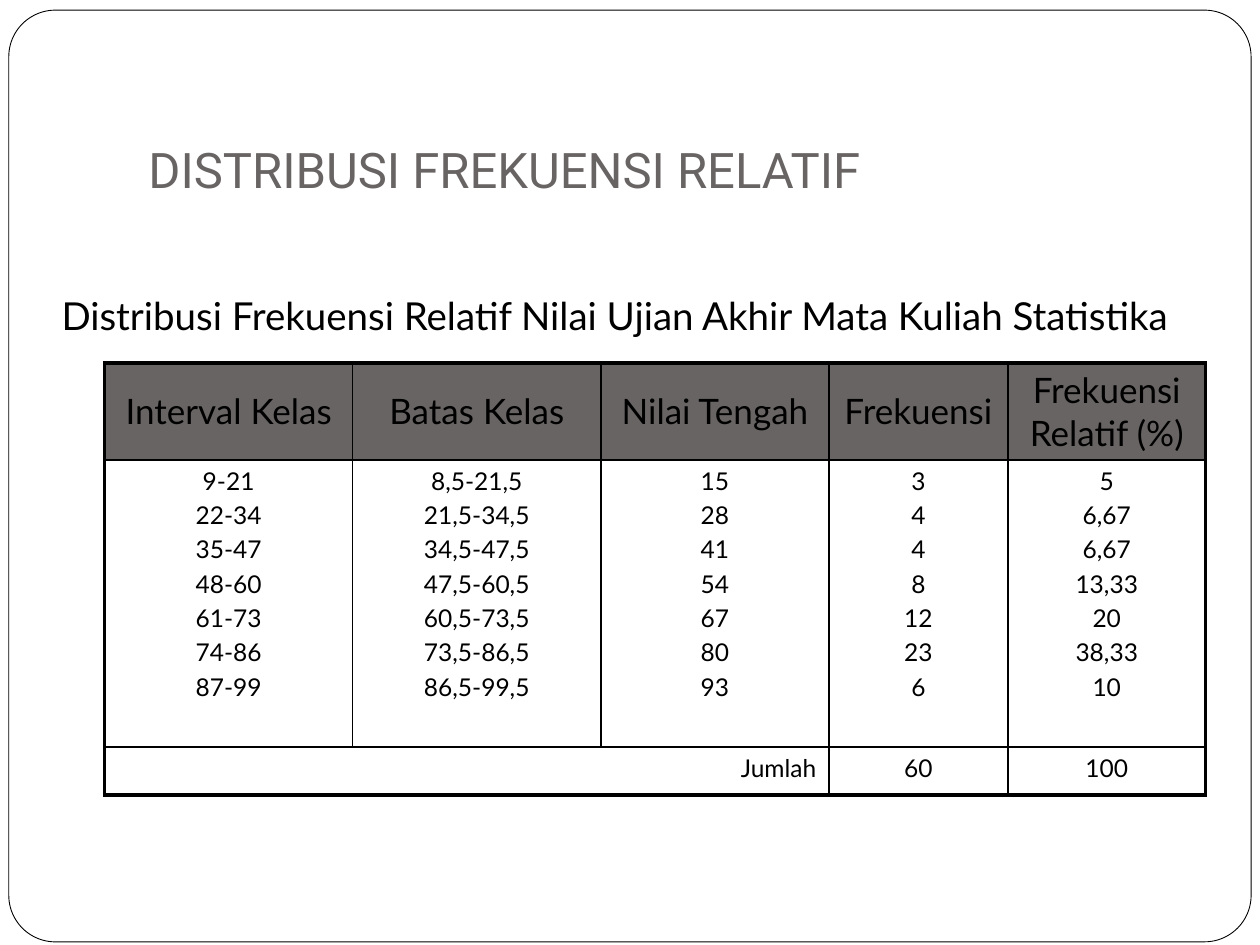
from dataclasses import dataclass

from lxml import etree
from pptx import Presentation
from pptx.dml.color import RGBColor
from pptx.enum.shapes import MSO_SHAPE
from pptx.enum.text import MSO_ANCHOR, PP_ALIGN
from pptx.oxml.ns import qn
from pptx.util import Inches, Pt

ROUNDED = MSO_SHAPE.ROUNDED_RECTANGLE
TOP, MIDDLE, BOTTOM = MSO_ANCHOR.TOP, MSO_ANCHOR.MIDDLE, MSO_ANCHOR.BOTTOM
LEFT, CENTER, RIGHT = PP_ALIGN.LEFT, PP_ALIGN.CENTER, PP_ALIGN.RIGHT


@dataclass(frozen=True)
class Theme:
    ink: str = "000000"
    gray: str = "696464"
    paper: str = "FFFFFF"
    title_font: str = "Roboto"
    body_font: str = "Lato"
    title_size: float = 28
    caption_size: float = 22
    header_size: float = 20
    body_size: float = 14
    outer_line: float = 2.25
    inner_line: float = 1
    frame_line: float = 0.5


@dataclass(frozen=True)
class Box:
    left: int
    top: int
    width: int
    height: int

    def share(self, left, top, width, height):
        return Box(
            self.left + round(self.width * left / 100),
            self.top + round(self.height * top / 100),
            round(self.width * width / 100),
            round(self.height * height / 100),
        )

    def bounds(self):
        return self.left, self.top, self.width, self.height


THEME = Theme()
HEADERS = ["Interval Kelas", "Batas Kelas", "Nilai Tengah", "Frekuensi", "Frekuensi Relatif (%)"]
CLASSES = [
    ("9-21", "8,5-21,5", "15", "3", "5"),
    ("22-34", "21,5-34,5", "28", "4", "6,67"),
    ("35-47", "34,5-47,5", "41", "4", "6,67"),
    ("48-60", "47,5-60,5", "54", "8", "13,33"),
    ("61-73", "60,5-73,5", "67", "12", "20"),
    ("74-86", "73,5-86,5", "80", "23", "38,33"),
    ("87-99", "86,5-99,5", "93", "6", "10"),
]
TOTALS = ["Jumlah", "", "", "60", "100"]
COLUMN_SHARES = [22.54, 22.54, 20.71, 16.25, 17.96]
ROW_SHARES = [22.45, 66.47, 11.08]


def write(frame, lines, *, size, font=THEME.body_font, color=THEME.ink, align=LEFT, gap=0.0):
    for index, line in enumerate(lines):
        paragraph = frame.add_paragraph() if index else frame.paragraphs[0]
        paragraph.alignment = align
        paragraph.space_before = Pt(size * gap)
        run = paragraph.add_run()
        run.text = line
        run.font.name = font
        run.font.size = Pt(size)
        run.font.color.rgb = RGBColor.from_string(color)


def draw_frame(slide, box):
    frame = slide.shapes.add_shape(ROUNDED, *box.bounds())
    frame.adjustments[0] = 0.05
    frame.shadow.inherit = False
    frame.fill.solid()
    frame.fill.fore_color.rgb = RGBColor.from_string(THEME.paper)
    frame.line.color.rgb = RGBColor.from_string(THEME.ink)
    frame.line.width = Pt(THEME.frame_line)


def draw_title(slide, box):
    title = slide.shapes.add_textbox(*box.bounds()).text_frame
    title.word_wrap = True
    title.vertical_anchor = BOTTOM
    title.margin_bottom = Inches(0.1)
    write(title, ["DISTRIBUSI FREKUENSI RELATIF"], size=THEME.title_size,
          font=THEME.title_font, color=THEME.gray)


def draw_caption(slide, box):
    caption = slide.shapes.add_textbox(*box.bounds()).text_frame
    caption.word_wrap = False
    write(caption, ["Distribusi Frekuensi Relatif Nilai Ujian Akhir Mata Kuliah Statistika"],
          size=THEME.caption_size)


def set_borders(cell, outer_sides):
    properties = cell._tc.get_or_add_tcPr()
    for position, side in enumerate("LRTB"):
        width = THEME.outer_line if side in outer_sides else THEME.inner_line
        border = etree.Element(qn(f"a:ln{side}"), w=str(Pt(width)))
        fill = etree.SubElement(border, qn("a:solidFill"))
        etree.SubElement(fill, qn("a:srgbClr"), val=THEME.ink)
        properties.insert(position, border)


def draw_table(slide, box):
    rows = [
        [[header] for header in HEADERS],
        list(zip(*CLASSES)),
        [[total] if total else [] for total in TOTALS],
    ]
    last_row, last_column = len(rows) - 1, len(HEADERS) - 1
    table = slide.shapes.add_table(len(rows), len(HEADERS), *box.bounds()).table
    table.first_row = table.horz_banding = False
    for column, share in zip(table.columns, COLUMN_SHARES):
        column.width = round(box.width * share / 100)
    for row, share in zip(table.rows, ROW_SHARES):
        row.height = round(box.height * share / 100)
    table.cell(last_row, 0).merge(table.cell(last_row, 2))

    for r, entries in enumerate(rows):
        is_header = r == 0
        for c, lines in enumerate(entries):
            cell = table.cell(r, c)
            cell.vertical_anchor = MIDDLE if is_header else TOP
            if is_header:
                cell.fill.solid()
                cell.fill.fore_color.rgb = RGBColor.from_string(THEME.gray)
            else:
                cell.fill.background()
            edges = {"L": c == 0, "R": c == last_column, "T": is_header, "B": r == last_row}
            set_borders(cell, [side for side, outer in edges.items() if outer])
            write(cell.text_frame, lines, gap=0.2,
                  size=THEME.header_size if is_header else THEME.body_size,
                  align=RIGHT if r == last_row and c == 0 else CENTER)


def main():
    deck = Presentation()
    deck.slide_width, deck.slide_height = Inches(10), Inches(7.5)
    slide = deck.slides.add_slide(deck.slide_layouts[6])
    page = Box(0, 0, deck.slide_width, deck.slide_height)
    draw_frame(slide, page.share(0.7, 1.07, 98.6, 98.67 - 0.07))
    draw_title(slide, page.share(10.8, 5.6, 85.2, 16.67))
    draw_table(slide, page.share(8.3, 38.4, 87.4, 45.73))
    draw_caption(slide, page.share(3.9, 30.27, 90.6, 6.27))
    deck.save("out.pptx")


if __name__ == "__main__":
    main()
